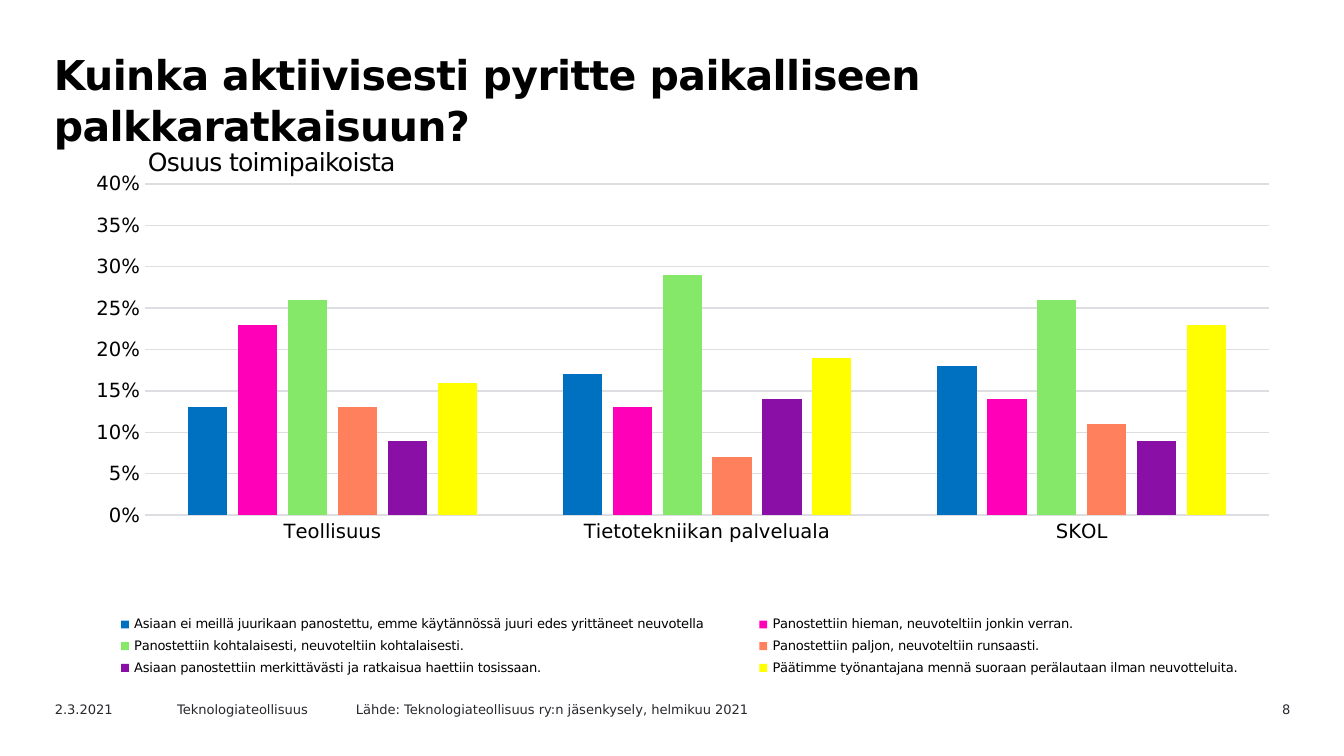
from dataclasses import dataclass

from lxml import etree
from pptx import Presentation
from pptx.chart.data import CategoryChartData
from pptx.dml.color import RGBColor
from pptx.enum.chart import XL_CHART_TYPE, XL_LEGEND_POSITION, XL_TICK_MARK
from pptx.enum.text import MSO_ANCHOR, MSO_AUTO_SIZE, PP_ALIGN
from pptx.oxml.ns import qn
from pptx.util import Inches, Pt

COLUMN_CLUSTERED = XL_CHART_TYPE.COLUMN_CLUSTERED
LEGEND_BOTTOM = XL_LEGEND_POSITION.BOTTOM
NO_TICKS = XL_TICK_MARK.NONE
TOP = MSO_ANCHOR.TOP
NO_AUTOFIT = MSO_AUTO_SIZE.NONE
LEFT, RIGHT = PP_ALIGN.LEFT, PP_ALIGN.RIGHT
TITLE_ONLY = 5
GRID = 0.1  # inches per grid column and row
SLIDE_WIDTH = Inches(10)
SLIDE_HEIGHT = SLIDE_WIDTH * 9 // 16


@dataclass(frozen=True)
class Theme:
    font: str = "DejaVu Sans"
    text: str = "000000"
    muted: str = "29282E"
    line: str = "DEDDE1"
    title_size: float = 22
    subtitle_size: float = 13.4
    chart_size: float = 10
    axis_size: float = 10.5
    small_size: float = 7
    line_width: float = 0.75


CATEGORIES = ["Teollisuus", "Tietotekniikan palveluala", "SKOL"]
SERIES = [
    ("Asiaan ei meillä juurikaan panostettu, emme käytännössä juuri edes yrittäneet neuvotella",
     (0.13, 0.17, 0.18), "0070C0"),
    ("Panostettiin hieman, neuvoteltiin jonkin verran.", (0.23, 0.13, 0.14), "FF00B8"),
    ("Panostettiin kohtalaisesti, neuvoteltiin kohtalaisesti.", (0.26, 0.29, 0.26), "85E869"),
    ("Panostettiin paljon, neuvoteltiin runsaasti.", (0.13, 0.07, 0.11), "FF805C"),
    ("Asiaan panostettiin merkittävästi ja ratkaisua haettiin tosissaan.",
     (0.09, 0.14, 0.09), "8A0FA6"),
    ("Päätimme työnantajana mennä suoraan perälautaan ilman neuvotteluita.",
     (0.16, 0.19, 0.23), "FFFF00"),
]
# Left, top, width and height in shares of the chart
PLOT_AREA = (0.072, 0.041, 0.911, 0.637)
LEGEND_AREA = (0.01, 0.86, 0.99, 0.14)
# Footer parts: text, column, width, alignment
FOOTER = [
    ("2.3.2021", 3.1, 10, LEFT),
    ("Teknologiateollisuus", 12.2, 14.2, LEFT),
    ("Lähde: Teknologiateollisuus ry:n jäsenkysely, helmikuu 2021", 25.5, 32.5, LEFT),
    ("8", 87.6, 9.4, RIGHT),
]


def grid(*cells):
    """Turn grid columns and rows into lengths."""
    return [Inches(cell * GRID) for cell in cells]


def format_font(font, name, size, color, bold=False):
    font.name, font.size, font.bold = name, Pt(size), bold
    font.color.rgb = RGBColor.from_string(color)


def write_text(frame, text, *, font, size, color, bold=False, align=LEFT,
               spacing=0, line_height=None, inset=None, indent=0):
    frame.word_wrap = True
    frame.auto_size = NO_AUTOFIT
    frame.vertical_anchor = TOP
    if inset is not None:
        frame.margin_left = frame.margin_right = Inches(inset)
        frame.margin_top = frame.margin_bottom = Inches(inset)
    paragraph = frame.paragraphs[0]
    paragraph.alignment = align
    paragraph.space_before = Pt(0)
    if indent:
        paragraph._p.get_or_add_pPr().set("marL", str(Inches(indent)))
    if line_height:
        paragraph.line_spacing = Pt(line_height)
    run = paragraph.add_run()
    run.text = text
    format_font(run.font, font, size, color, bold)
    if spacing:
        run._r.get_or_add_rPr().set("spc", str(round(spacing * 100)))


def place_chart_part(part, position, area, target=None):
    """Give a chart part a fixed place, its layout standing at the given position."""
    for old_layout in part.findall(qn("c:layout")):
        part.remove(old_layout)
    layout = etree.Element(qn("c:layout"))
    manual = etree.SubElement(layout, qn("c:manualLayout"))
    settings = [("layoutTarget", target)] if target else []
    settings += [("xMode", "edge"), ("yMode", "edge"), *zip("xywh", area)]
    for tag, value in settings:
        etree.SubElement(manual, qn(f"c:{tag}")).set("val", str(value))
    part.insert(position, layout)


class SlideBuilder:
    def __init__(self, slide, theme):
        self.slide, self.theme = slide, theme

    def title(self, text, *cells):
        shape = self.slide.shapes.title
        shape.left, shape.top, shape.width, shape.height = grid(*cells)
        write_text(shape.text_frame, text, font=self.theme.font,
                   size=self.theme.title_size, color=self.theme.text,
                   bold=True, spacing=-0.3, line_height=27, indent=0.02)

    def text(self, text, *cells, **formatting):
        shape = self.slide.shapes.add_textbox(*grid(*cells))
        write_text(shape.text_frame, text, font=self.theme.font, **formatting)

    def style_line(self, line):
        line.color.rgb = RGBColor.from_string(self.theme.line)
        line.width = Pt(self.theme.line_width)

    def column_chart(self, categories, series, *cells):
        theme = self.theme
        data = CategoryChartData(number_format="0%")
        data.categories = categories
        for name, values, _ in series:
            data.add_series(name, values)
        chart = self.slide.shapes.add_chart(COLUMN_CLUSTERED, *grid(*cells), data).chart
        chart.has_title = False
        format_font(chart.font, theme.font, theme.chart_size, theme.muted)

        # Columns
        plot = chart.plots[0]
        plot.gap_width, plot.overlap = 219, -27
        plot.vary_by_categories = False
        for column, (_, _, color) in zip(plot.series, series):
            column.format.fill.solid()
            column.format.fill.fore_color.rgb = RGBColor.from_string(color)
            column.invert_if_negative = False

        # Axes
        for axis in (chart.category_axis, chart.value_axis):
            axis.major_tick_mark = axis.minor_tick_mark = NO_TICKS
            format_font(axis.tick_labels.font, theme.font, theme.axis_size, theme.text)
        self.style_line(chart.category_axis.format.line)
        value_axis = chart.value_axis
        value_axis.minimum_scale, value_axis.maximum_scale = 0, 0.4
        value_axis.major_unit = 0.05
        value_axis.tick_labels.number_format = "0%"
        value_axis.tick_labels.number_format_is_linked = False
        value_axis.format.line.fill.background()
        self.style_line(value_axis.major_gridlines.format.line)

        # Legend and plot area
        chart.has_legend = True
        legend = chart.legend
        legend.position = LEGEND_BOTTOM
        legend.include_in_layout = False
        format_font(legend.font, theme.font, theme.small_size, theme.text)
        place_chart_part(legend._element, 1, LEGEND_AREA)
        place_chart_part(chart._chartSpace.chart.plotArea, 0, PLOT_AREA, "inner")


def main():
    theme = Theme()
    presentation = Presentation()
    presentation.slide_width, presentation.slide_height = SLIDE_WIDTH, SLIDE_HEIGHT
    slide = presentation.slides.add_slide(presentation.slide_layouts[TITLE_ONLY])
    builder = SlideBuilder(slide, theme)

    # Heading
    builder.title("Kuinka aktiivisesti pyritte paikalliseen palkkaratkaisuun?",
                  2.8, 3.1, 87.4, 7.1)

    # Footer
    for text, column, width, align in FOOTER:
        builder.text(text, column, 51.7, width, 1.8, size=theme.small_size,
                     color=theme.muted, align=align)

    # Chart and its subtitle
    builder.text("Osuus toimipaikoista", 10.6, 10.5, 22, 3.1, size=theme.subtitle_size,
                 color=theme.text, spacing=-0.4, inset=0.04)
    builder.column_chart(CATEGORIES, SERIES, 4.2, 12.1, 91.8, 38.7)

    presentation.save("out.pptx")


if __name__ == "__main__":
    main()
